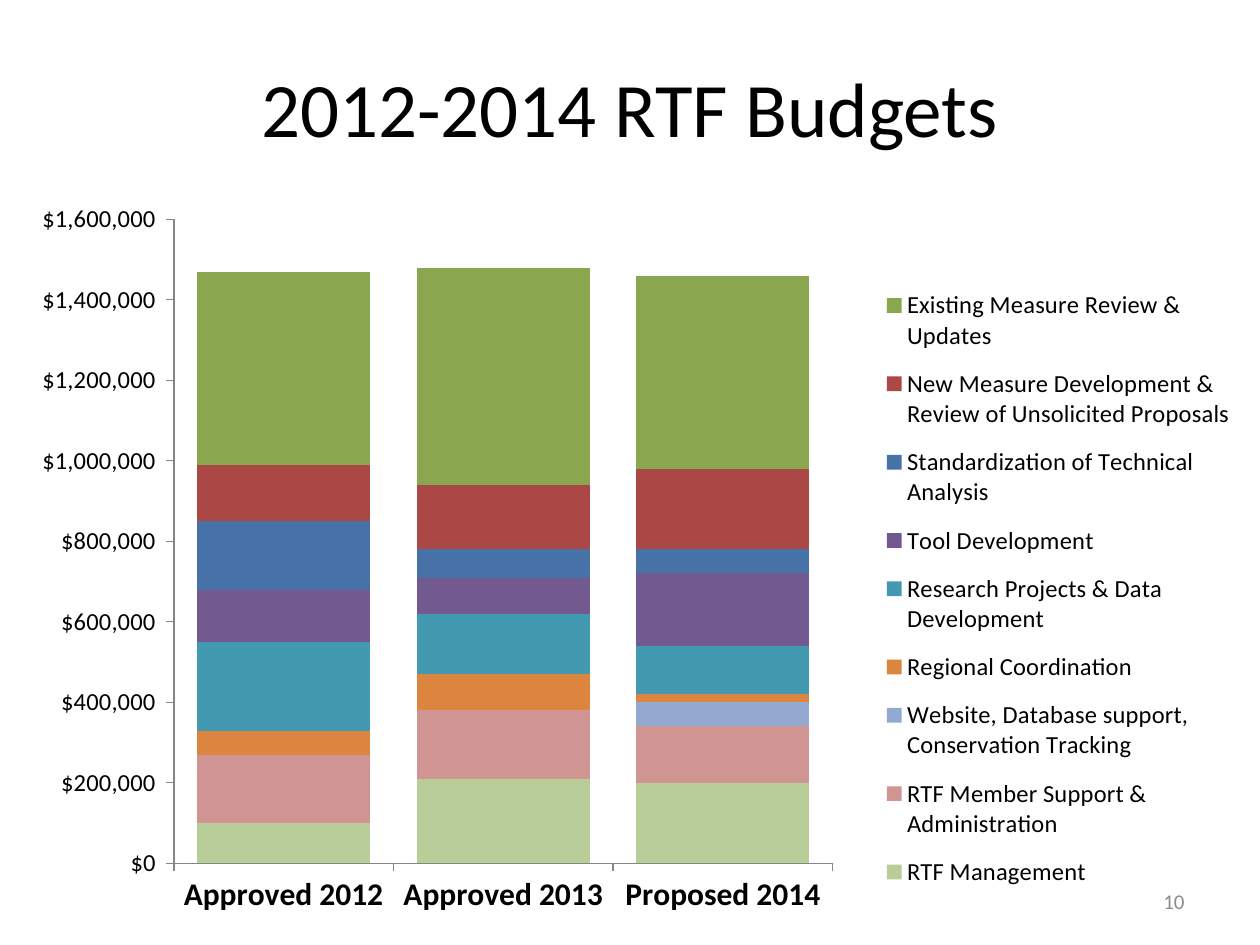
from lxml import etree
from pptx import Presentation
from pptx.chart.data import CategoryChartData
from pptx.dml.color import RGBColor
from pptx.enum.chart import XL_CHART_TYPE, XL_LEGEND_POSITION, XL_TICK_MARK
from pptx.enum.text import MSO_ANCHOR, PP_ALIGN
from pptx.oxml.ns import qn
from pptx.util import Inches, Pt

FONT = "Calibri"
BLACK = RGBColor(0x00, 0x00, 0x00)
GRAY = RGBColor(0x8C, 0x8C, 0x8C)
AXIS_GRAY = RGBColor(0x86, 0x86, 0x86)
GREEN = RGBColor(0x8A, 0xA6, 0x4F)
RED = RGBColor(0xAB, 0x47, 0x44)
BLUE = RGBColor(0x46, 0x72, 0xA8)
PURPLE = RGBColor(0x72, 0x59, 0x90)
TEAL = RGBColor(0x42, 0x99, 0xB0)
ORANGE = RGBColor(0xDC, 0x85, 0x3E)
LIGHT_BLUE = RGBColor(0x93, 0xA9, 0xD0)
PINK = RGBColor(0xD0, 0x94, 0x93)
LIGHT_GREEN = RGBColor(0xB8, 0xCD, 0x97)

YEARS = ["Approved 2012", "Approved 2013", "Proposed 2014"]
# Budget lines from the bottom of the stack to the top
BUDGETS = [
    ("RTF Management", (100000, 210000, 200000), LIGHT_GREEN),
    ("RTF Member Support & Administration", (170000, 170000, 140000), PINK),
    ("Website, Database support, Conservation Tracking", (0, 0, 60000), LIGHT_BLUE),
    ("Regional Coordination", (60000, 90000, 20000), ORANGE),
    ("Research Projects & Data Development", (220000, 150000, 120000), TEAL),
    ("Tool Development", (130000, 90000, 180000), PURPLE),
    ("Standardization of Technical Analysis", (170000, 70000, 60000), BLUE),
    ("New Measure Development & Review of Unsolicited Proposals",
     (140000, 160000, 200000), RED),
    ("Existing Measure Review & Updates", (480000, 540000, 480000), GREEN),
]


def set_layout(element, index, fractions, inner=False):
    """Place a chart part by fractions of the chart: left, top, width, height."""
    for old in element.findall(qn("c:layout")):
        element.remove(old)
    layout = etree.Element(qn("c:layout"))
    manual = etree.SubElement(layout, qn("c:manualLayout"))
    settings = [("layoutTarget", "inner")] if inner else []
    settings += [("xMode", "edge"), ("yMode", "edge")]
    settings += zip("xywh", map(str, fractions))
    for tag, value in settings:
        etree.SubElement(manual, qn(f"c:{tag}")).set("val", value)
    element.insert(index, layout)


class BudgetSlide:
    def __init__(self, deck):
        self.page = deck.slides.add_slide(deck.slide_layouts[6])

    def style(self, font, size, color=BLACK, bold=False):
        font.name = FONT
        font.size = Pt(size)
        font.bold = bold
        font.color.rgb = color

    def text(self, words, left, top, width, height, size, color, align):
        box = self.page.shapes.add_textbox(
            Inches(left), Inches(top), Inches(width), Inches(height))
        frame = box.text_frame
        frame.word_wrap = True
        frame.vertical_anchor = MSO_ANCHOR.MIDDLE
        frame.text = words
        para = frame.paragraphs[0]
        para.alignment = align
        self.style(para.runs[0].font, size, color)

    def axis(self, axis, size, bold=False):
        axis.has_major_gridlines = False
        axis.major_tick_mark = XL_TICK_MARK.OUTSIDE
        axis.minor_tick_mark = XL_TICK_MARK.NONE
        axis.format.line.color.rgb = AXIS_GRAY
        axis.format.line.width = Pt(0.75)
        self.style(axis.tick_labels.font, size, bold=bold)

    def stacked_chart(self, years, budgets, left, top, width, height):
        data = CategoryChartData()
        data.categories = years
        for name, values, _ in budgets:
            data.add_series(name, values)
        chart = self.page.shapes.add_chart(
            XL_CHART_TYPE.COLUMN_STACKED, Inches(left), Inches(top),
            Inches(width), Inches(height), data).chart
        chart.has_title = False
        self.style(chart.font, 10)

        # Columns
        plot = chart.plots[0]
        plot.gap_width = 27
        plot.overlap = 100
        plot.vary_by_categories = False
        for series, (_, _, color) in zip(plot.series, budgets):
            series.format.fill.solid()
            series.format.fill.fore_color.rgb = color
        plot_area = chart.element.find(".//" + qn("c:plotArea"))
        set_layout(plot_area, 0, (0.138, 0.083, 0.523, 0.814), inner=True)

        # Axes
        self.axis(chart.category_axis, 18, bold=True)
        self.axis(chart.value_axis, 14)
        chart.value_axis.minimum_scale = 0
        chart.value_axis.maximum_scale = 1600000
        chart.value_axis.major_unit = 200000
        labels = chart.value_axis.tick_labels
        labels.number_format = '"$"#,##0_);\\("$"#,##0\\)'
        labels.number_format_is_linked = False

        # Legend
        chart.has_legend = True
        chart.legend.position = XL_LEGEND_POSITION.RIGHT
        chart.legend.include_in_layout = False
        self.style(chart.legend.font, 14)
        set_layout(chart.element.find(".//" + qn("c:legend")), 1,
                   (0.69, 0.15, 0.3, 0.8))


def main():
    deck = Presentation()
    deck.slide_width, deck.slide_height = Inches(10), Inches(7.5)
    slide = BudgetSlide(deck)
    # Title
    slide.text("2012-2014 RTF Budgets", 0.5, 0.22, 9, 1.25, 44, BLACK, PP_ALIGN.CENTER)
    # Budget chart
    slide.stacked_chart(YEARS, BUDGETS, 0, 1.22, 10, 6.28)
    # Page number
    slide.text("10", 7.17, 6.95, 2.33, 0.4, 12, GRAY, PP_ALIGN.RIGHT)
    deck.save("out.pptx")


if __name__ == "__main__":
    main()
